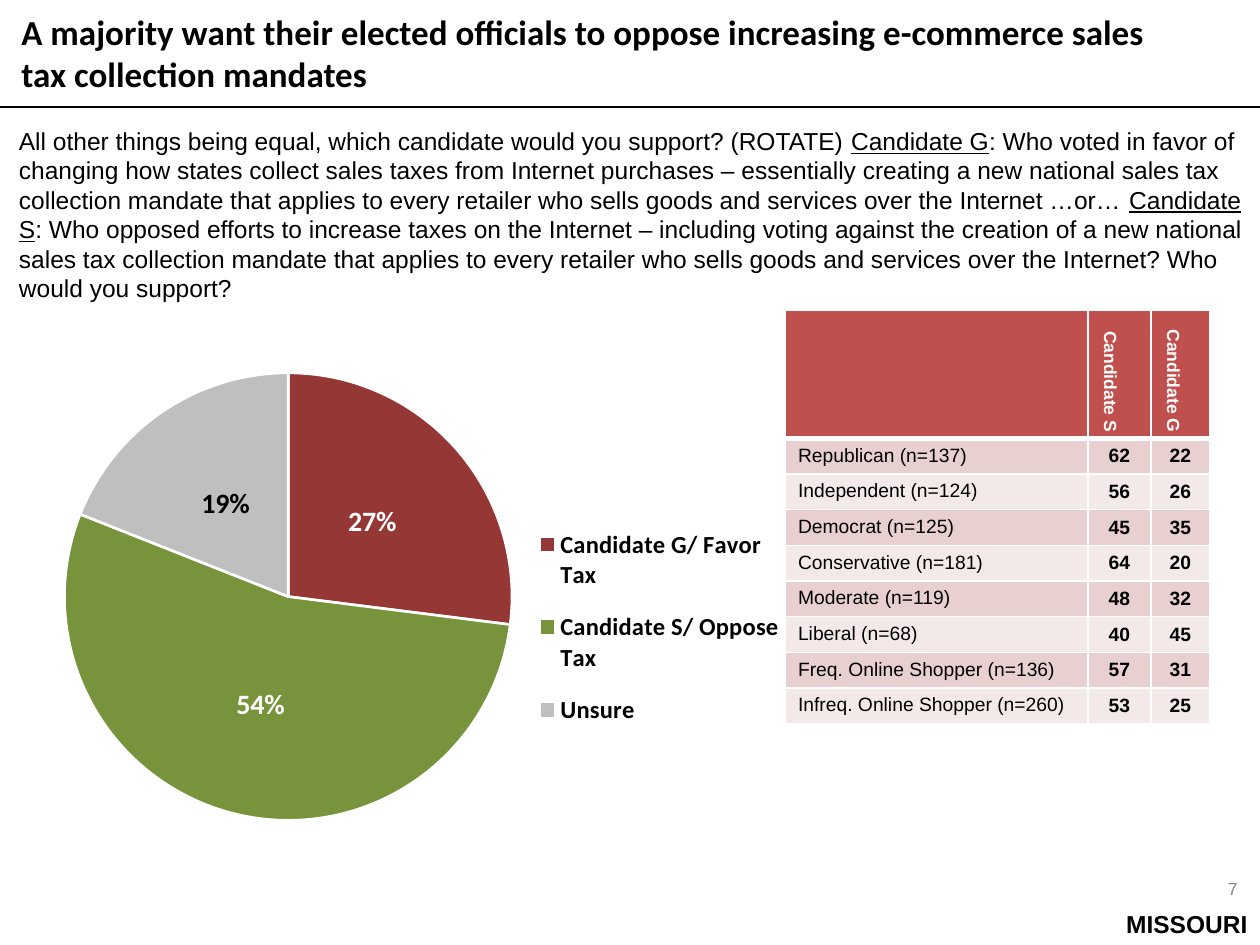
"""Build the Missouri poll slide on e-commerce sales tax mandates."""
from dataclasses import dataclass
from typing import Any, NamedTuple

import lxml.etree
import pptx
import pptx.chart.data
import pptx.dml.color
import pptx.enum.chart
import pptx.enum.shapes
import pptx.enum.text
import pptx.oxml
import pptx.oxml.ns
import pptx.util

Pt = pptx.util.Pt
qn = pptx.oxml.ns.qn
Align = pptx.enum.text.PP_ALIGN
Anchor = pptx.enum.text.MSO_ANCHOR


@dataclass(frozen=True)
class Theme:
    heading_font: str = "Calibri"
    body_font: str = "Arial"
    black: str = "000000"
    white: str = "FFFFFF"
    grey: str = "898989"
    header: str = "C0504D"
    bands: tuple = ("E8D0D0", "F4E9E9")
    title_size: float = 20
    label_size: float = 16
    body_size: float = 14
    table_size: float = 11
    small_size: float = 10


class Area(NamedTuple):
    left: float
    top: float
    width: float
    height: float


class Group(NamedTuple):
    name: str
    oppose: int
    favor: int


class Slice(NamedTuple):
    name: str
    percent: int
    color: str
    label_color: str


THEME = Theme()

QUESTION = [
    ("All other things being equal, which candidate would you support? (ROTATE) ", False),
    ("Candidate G", True),
    (": Who voted in favor of changing how states collect sales taxes from Internet purchases – "
     "essentially creating a new national sales tax collection mandate that applies to every "
     "retailer who sells goods and services over the Internet …or… ", False),
    ("Candidate S", True),
    (": Who opposed efforts to increase taxes on the Internet – including voting against the "
     "creation of a new national sales tax collection mandate that applies to every retailer "
     "who sells goods and services over the Internet? Who would you support?", False),
]
GROUPS = [
    Group("Republican (n=137)", 62, 22),
    Group("Independent (n=124)", 56, 26),
    Group("Democrat (n=125)", 45, 35),
    Group("Conservative (n=181)", 64, 20),
    Group("Moderate (n=119)", 48, 32),
    Group("Liberal (n=68)", 40, 45),
    Group("Freq. Online Shopper (n=136)", 57, 31),
    Group("Infreq. Online Shopper (n=260)", 53, 25),
]
SLICES = [
    Slice("Candidate G/ Favor Tax", 27, "953735", THEME.white),
    Slice("Candidate S/ Oppose Tax", 54, "77933C", THEME.white),
    Slice("Unsure", 19, "BFBFBF", THEME.black),
]


def rgb(color: str) -> pptx.dml.color.RGBColor:
    """Turn a hex string into a colour."""
    return pptx.dml.color.RGBColor.from_string(color)


def style_font(font: Any, *, size: float, color: str = THEME.black,
               name: str = THEME.body_font, bold: bool = False) -> None:
    """Apply face, size, weight and colour to a font."""
    font.name, font.size, font.bold = name, Pt(size), bold
    font.color.rgb = rgb(color)


def write(para: Any, text: str, *, align: Any = Align.LEFT, underline: bool = False,
          **style: Any) -> None:
    """Add one formatted span of text to a paragraph."""
    para.alignment = align
    span = para.add_run()
    span.text = text
    style_font(span.font, **style)
    if underline:
        span.font.underline = True


def place(box: Any, area: Area, anchor: Any = Anchor.TOP) -> Any:
    """Move a text shape to its area and return its first paragraph."""
    box.left, box.top, box.width, box.height = (Pt(length) for length in area)
    frame = box.text_frame
    frame.word_wrap = True
    frame.auto_size = pptx.enum.text.MSO_AUTO_SIZE.NONE
    frame.vertical_anchor = anchor
    return frame.paragraphs[0]


def add_text(page: Any, area: Area, text: str, anchor: Any = Anchor.TOP, **style: Any) -> None:
    """Add a text box with one formatted paragraph."""
    box = page.shapes.add_textbox(*(Pt(length) for length in area))
    write(place(box, area, anchor), text, **style)


def add_question(page: Any) -> None:
    """Fill the body placeholder with the survey question."""
    para = place(page.placeholders[1], Area(3.6, 68.4, 716.4, 109))
    properties = para._p.get_or_add_pPr()
    properties.set("marL", "0")
    properties.set("indent", "0")
    lxml.etree.SubElement(properties, qn("a:buNone"))
    para.space_before = Pt(0)
    para.line_spacing = Pt(16.8)
    for text, underline in QUESTION:
        write(para, text, underline=underline, size=THEME.body_size)


def add_rule(page: Any, top: float) -> None:
    """Draw the line under the title across the page."""
    rule = page.shapes.add_connector(
        pptx.enum.shapes.MSO_CONNECTOR.STRAIGHT, Pt(0), Pt(top), Pt(720), Pt(top))
    rule.line.color.rgb = rgb(THEME.black)
    rule.line.width = Pt(0.75)
    lxml.etree.SubElement(rule._element.spPr, qn("a:effectLst"))


def fill_cell(cell: Any, text: str, fill: str, *, bottom: float = 1, anchor: Any = Anchor.MIDDLE,
              **style: Any) -> None:
    """Write a table cell with its fill and white borders."""
    cell.fill.solid()
    cell.fill.fore_color.rgb = rgb(fill)
    cell.vertical_anchor = anchor
    if text:
        write(cell.text_frame.paragraphs[0], text, **style)
    widths = {"lnL": 1, "lnR": 1, "lnT": 1, "lnB": bottom}
    for index, (side, width) in enumerate(widths.items()):
        border = lxml.etree.Element(qn(f"a:{side}"), w=str(Pt(width)))
        solid = lxml.etree.SubElement(border, qn("a:solidFill"))
        lxml.etree.SubElement(solid, qn("a:srgbClr"), val=THEME.white)
        cell._tc.get_or_add_tcPr().insert(index, border)


def add_groups(page: Any) -> None:
    """Add the table of support by voter group."""
    header, row = 65.2, 20.4
    area = Area(448.8, 177.4, 242.6, header + row * len(GROUPS))
    table = page.shapes.add_table(len(GROUPS) + 1, 3, *(Pt(length) for length in area)).table
    for column, width in zip(table.columns, (172.8, 36, 33.8)):
        column.width = Pt(width)
    for index, line in enumerate(table.rows):
        line.height = Pt(row if index else header)
    for index, text in enumerate(("", "Candidate S", "Candidate G")):
        cell = table.cell(0, index)
        fill_cell(cell, text, THEME.header, bottom=3, align=Align.RIGHT,
                  size=THEME.small_size, color=THEME.white, bold=True)
        if text:
            cell._tc.get_or_add_tcPr().set("vert", "vert")
            cell.margin_left = cell.margin_right = Pt(3.6)
            cell.margin_top = cell.margin_bottom = Pt(7.2)
    for index, group in enumerate(GROUPS):
        fill = THEME.bands[index % 2]
        fill_cell(table.cell(index + 1, 0), group.name, fill, anchor=Anchor.TOP,
                  size=THEME.table_size)
        for column, value in enumerate((group.oppose, group.favor), start=1):
            fill_cell(table.cell(index + 1, column), str(value), fill, align=Align.CENTER,
                      size=THEME.table_size, bold=True)


def set_layout(parent: Any, index: int, area: Area, inner: bool = False) -> None:
    """Fix a chart part at fractions of the chart area."""
    for old in parent.findall(qn("c:layout")):
        parent.remove(old)
    layout = lxml.etree.Element(qn("c:layout"))
    manual = lxml.etree.SubElement(layout, qn("c:manualLayout"))
    settings = {"layoutTarget": "inner"} if inner else {}
    settings |= {"xMode": "edge", "yMode": "edge"} | dict(zip("xywh", map(str, area)))
    for tag, value in settings.items():
        lxml.etree.SubElement(manual, qn(f"c:{tag}"), val=value)
    parent.insert(index, layout)


def add_pie(page: Any) -> None:
    """Add the pie chart of overall support."""
    data = pptx.chart.data.CategoryChartData(number_format='0"%"')
    data.categories = [part.name for part in SLICES]
    data.add_series("Series 1", [part.percent for part in SLICES])
    area = Area(23.8, 184.3, 427, 319.7)
    chart = page.shapes.add_chart(pptx.enum.chart.XL_CHART_TYPE.PIE,
                                  *(Pt(length) for length in area), data).chart
    style_font(chart.font, size=THEME.small_size, name=THEME.heading_font)
    chart.has_title = False
    chart.has_legend = True
    chart.legend.position = pptx.enum.chart.XL_LEGEND_POSITION.RIGHT
    chart.legend.include_in_layout = False
    style_font(chart.legend.font, size=THEME.body_size, name=THEME.heading_font, bold=True)
    plot = chart.plots[0]
    plot.vary_by_categories = True
    set_layout(plot._element.getparent(), 0, Area(0.03, 0.09, 0.6, 0.8), inner=True)
    set_layout(chart.legend._element, 1, Area(0.66, 0.33, 0.34, 0.43))
    series = plot.series[0]
    center = pptx.enum.chart.XL_LABEL_POSITION.CENTER
    labels = series.data_labels
    labels.show_value = True
    labels.number_format, labels.number_format_is_linked = '0"%"', False
    labels.position = center
    label_style = {"size": THEME.label_size, "name": THEME.heading_font, "bold": True}
    style_font(labels.font, color=THEME.white, **label_style)
    for index, part in enumerate(SLICES):
        point = series.points[index]
        point.format.fill.solid()
        point.format.fill.fore_color.rgb = rgb(part.color)
        point.format.line.color.rgb = rgb(THEME.white)
        point.format.line.width = Pt(1.5)
        if part.label_color != THEME.white:
            style_font(point.data_label.font, color=part.label_color, **label_style)
            point.data_label.position = center


def main() -> None:
    """Build and save the deck."""
    deck = pptx.Presentation()
    deck.slide_width, deck.slide_height = Pt(720), Pt(540)
    page = deck.slides.add_slide(deck.slide_layouts[1])
    write(place(page.shapes.title, Area(5, 2.5, 686, 56)),
          "A majority want their elected officials to oppose increasing e-commerce sales "
          "tax collection mandates",
          size=THEME.title_size, name=THEME.heading_font, bold=True)
    add_rule(page, 61.2)
    add_question(page)
    add_pie(page)
    add_groups(page)
    add_text(page, Area(619.2, 493.2, 95, 28.8), "7", Anchor.MIDDLE, align=Align.RIGHT,
             size=THEME.small_size, color=THEME.grey)
    add_text(page, Area(476.6, 516.2, 243.4, 23.8), "MISSOURI", align=Align.RIGHT,
             size=THEME.body_size, bold=True)
    deck.save("out.pptx")


if __name__ == "__main__":
    main()
